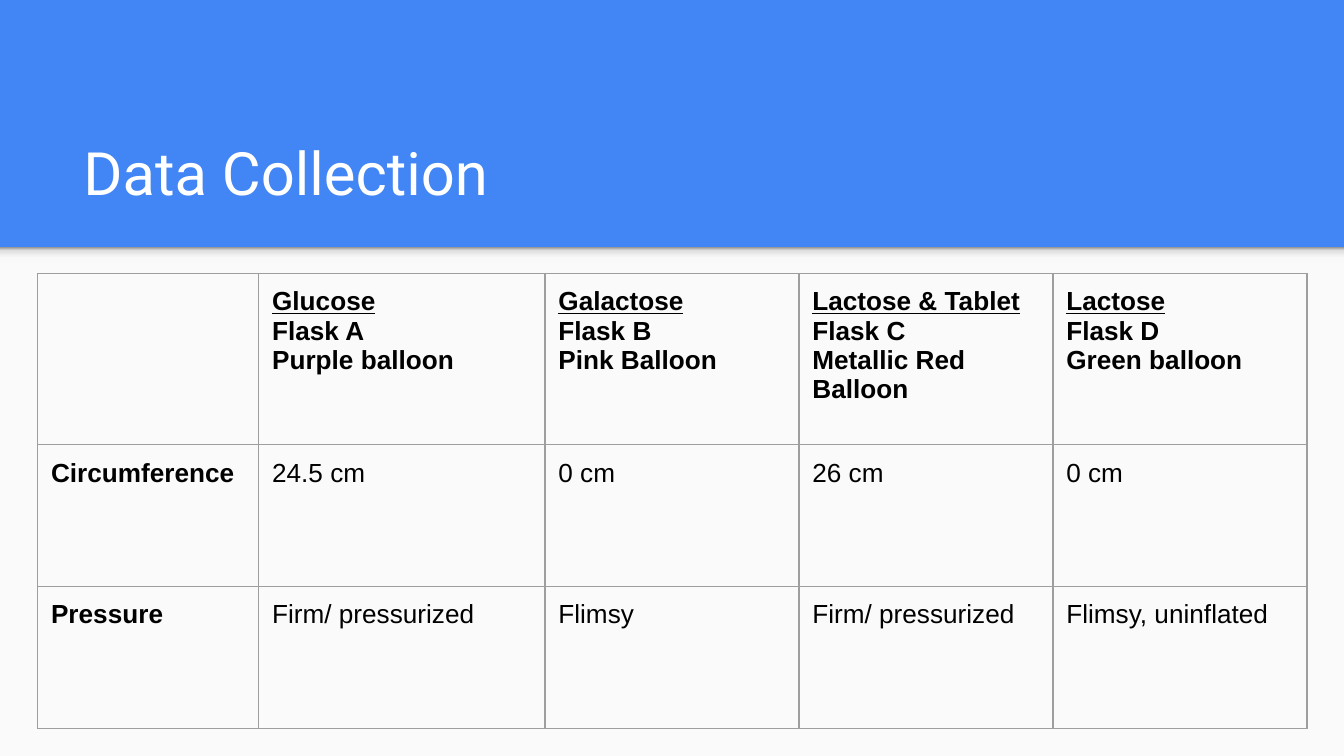
from dataclasses import dataclass

from lxml.etree import SubElement
from pptx import Presentation
from pptx.dml.color import RGBColor
from pptx.enum.shapes import MSO_SHAPE
from pptx.enum.text import MSO_ANCHOR, PP_ALIGN
from pptx.oxml.ns import qn
from pptx.util import Pt

EMU = 4572  # 200 px to the inch
WIDE, HIGH = 2000, 1125
BAND = 368
PAD = 20
COLORS = {
    "blue": "4285F4", "panel": "FAFAFA", "white": "FFFFFF",
    "black": "000000", "grid": "9E9E9E",
}
SHADE = [(0, "F9F9F9"), (36, "F9F9F9"), (80, "DEDEDE"), (100, "999999")]
COLS = [329, 426, 378, 378, 378]
ROWS = [255, 211, 211]


@dataclass
class Box:
    left: int
    top: int
    width: int
    height: int

    def emu(self) -> list[int]:
        return [px(n) for n in (self.left, self.top, self.width, self.height)]


@dataclass
class Flask:
    sugar: str
    name: str
    balloon: str
    girth: str
    pressure: str


FLASKS = [
    Flask("Glucose", "Flask A", "Purple balloon", "24.5 cm", "Firm/ pressurized"),
    Flask("Galactose", "Flask B", "Pink Balloon", "0 cm", "Flimsy"),
    Flask("Lactose & Tablet", "Flask C", "Metallic Red Balloon", "26 cm",
          "Firm/ pressurized"),
    Flask("Lactose", "Flask D", "Green balloon", "0 cm", "Flimsy, uninflated"),
]


def px(n: int) -> int:
    return n * EMU


def rgb(name: str) -> RGBColor:
    return RGBColor.from_string(COLORS[name])


def write(para, text: str, *, size=14, font="Arial", color="black",
          bold=False, under=False) -> None:
    para.alignment = PP_ALIGN.LEFT
    run = para.add_run()
    run.text = text
    face = run.font
    face.size, face.name = Pt(size), font
    face.bold, face.underline = bold, under
    face.color.rgb = rgb(color)


def add_rect(slide, box: Box):
    shape = slide.shapes.add_shape(MSO_SHAPE.RECTANGLE, *box.emu())
    shape.shadow.inherit = False
    shape.line.fill.background()
    return shape


def add_shade(slide, box: Box) -> None:
    """Draw the soft shadow below the title band, darkest at its top."""
    shape = add_rect(slide, box)
    shape.fill.gradient()
    shape.fill.gradient_angle = 90
    stops = next(shape.element.iter(qn("a:gsLst")))
    for old in list(stops):
        stops.remove(old)
    for pos, color in SHADE:
        stop = SubElement(stops, qn("a:gs"), pos=str(pos * 1000))
        SubElement(stop, qn("a:srgbClr"), val=color)


def set_pad(item) -> None:
    item.margin_left = item.margin_right = px(PAD)
    item.margin_top = item.margin_bottom = px(PAD)


def style_cell(cell) -> None:
    set_pad(cell)
    cell.vertical_anchor = MSO_ANCHOR.TOP
    props = cell._tc.get_or_add_tcPr()
    for side in ("lnL", "lnR", "lnT", "lnB"):
        line = SubElement(props, qn(f"a:{side}"), w=str(Pt(0.75)))
        fill = SubElement(line, qn("a:solidFill"))
        SubElement(fill, qn("a:srgbClr"), val=COLORS["grid"])
    cell.fill.background()


def fill_cell(cell, lines: list[str], *, bold=False, head=False) -> None:
    frame = cell.text_frame
    for i, text in enumerate(lines):
        para = frame.add_paragraph() if i else frame.paragraphs[0]
        write(para, text, bold=bold, under=head and i == 0)


def add_data(slide) -> None:
    box = Box(56, 407, sum(COLS), sum(ROWS))
    table = slide.shapes.add_table(len(ROWS), len(COLS), *box.emu()).table
    table.first_row = table.horz_banding = False
    for col, width in zip(table.columns, COLS):
        col.width = px(width)
    for row, height in zip(table.rows, ROWS):
        row.height = px(height)
    for cell in table.iter_cells():
        style_cell(cell)
    for i, label in enumerate(["Circumference", "Pressure"], 1):
        fill_cell(table.cell(i, 0), [label], bold=True)
    for i, flask in enumerate(FLASKS, 1):
        fill_cell(table.cell(0, i), [flask.sugar, flask.name, flask.balloon],
                  bold=True, head=True)
        fill_cell(table.cell(1, i), [flask.girth])
        fill_cell(table.cell(2, i), [flask.pressure])


def add_title(slide, text: str, box: Box) -> None:
    title = slide.shapes.title
    title.left, title.top, title.width, title.height = box.emu()
    frame = title.text_frame
    set_pad(frame)
    frame.vertical_anchor = MSO_ANCHOR.BOTTOM
    write(frame.paragraphs[0], text, size=32, font="Roboto", color="white")


def main() -> None:
    deck = Presentation()
    deck.slide_width, deck.slide_height = px(WIDE), px(HIGH)
    slide = deck.slides.add_slide(deck.slide_layouts[5])
    back = slide.background.fill
    back.solid()
    back.fore_color.rgb = rgb("blue")
    panel = add_rect(slide, Box(0, BAND, WIDE, HIGH - BAND))
    panel.fill.solid()
    panel.fill.fore_color.rgb = rgb("panel")
    add_shade(slide, Box(0, BAND, WIDE, 24))
    add_title(slide, "Data Collection", Box(104, 161, 1798, 168))
    add_data(slide)
    deck.save("out.pptx")


if __name__ == "__main__":
    main()
